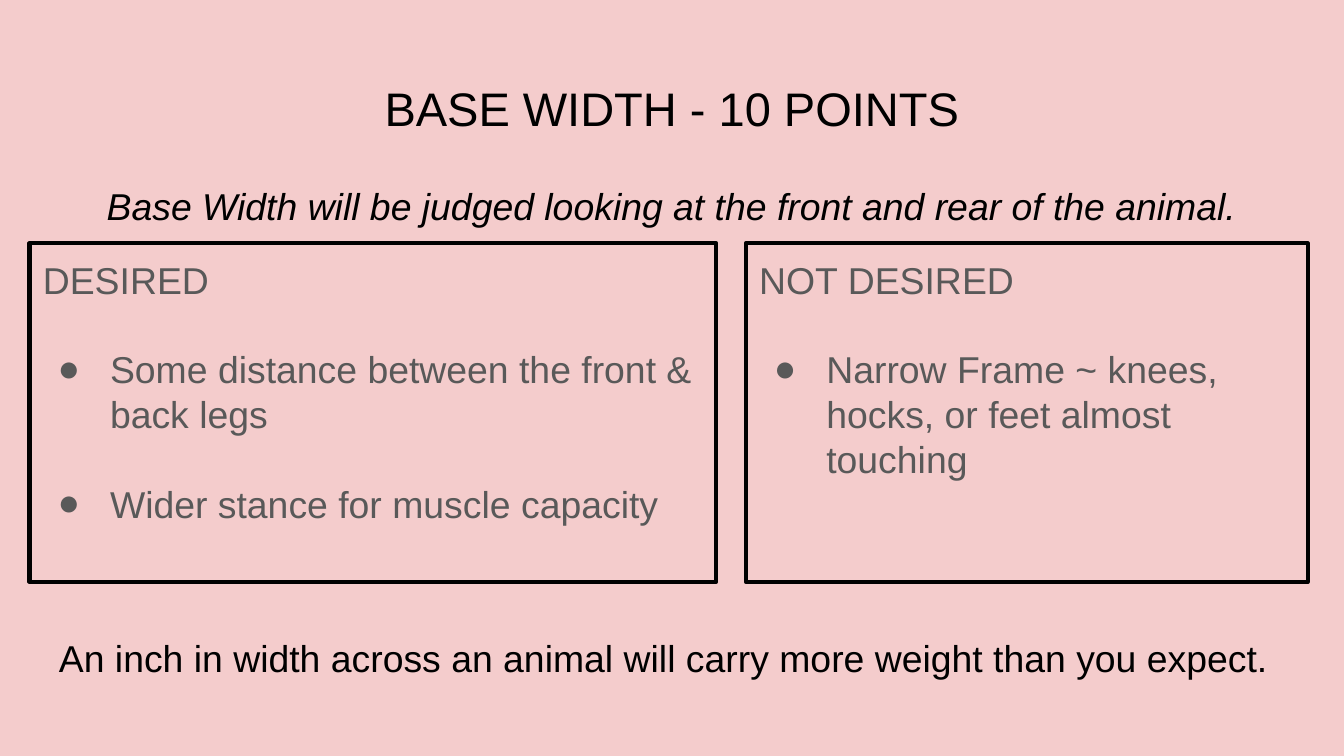
from lxml.etree import SubElement
from pptx import Presentation
from pptx.dml.color import RGBColor
from pptx.enum.shapes import MSO_SHAPE
from pptx.enum.text import MSO_ANCHOR as Anchor, PP_ALIGN as Align
from pptx.oxml.ns import qn
from pptx.util import Inches, Pt

PINK = RGBColor(0xF4, 0xCC, 0xCC)
BLACK = RGBColor(0, 0, 0)
GREY = RGBColor(0x59, 0x59, 0x59)
BODY_SIZE = 20
BULLET_GAP = 24


def inches(box):
    """Turn a box of plain numbers into lengths."""
    return [Inches(value) for value in box]


def set_frame(frame):
    """Give a text frame wrapping, even insets and a top anchor."""
    frame.word_wrap = True
    frame.vertical_anchor = Anchor.TOP
    frame.margin_left = frame.margin_right = Inches(0.1)
    frame.margin_top = frame.margin_bottom = Inches(0.1)


def style(paragraph, color, size=BODY_SIZE, align=Align.LEFT, italic=False):
    """Format a paragraph and its runs."""
    paragraph.alignment = align
    for run in paragraph.runs:
        font = run.font
        font.name, font.size, font.italic = "Arial", Pt(size), italic
        font.color.rgb = color


def add_bullet(paragraph):
    """Give a paragraph a hanging round bullet."""
    properties = paragraph._p.get_or_add_pPr()
    properties.set("marL", str(Inches(0.5)))
    properties.set("indent", str(Inches(-0.39)))
    bullet_color = SubElement(properties, qn("a:buClr"))
    SubElement(bullet_color, qn("a:srgbClr"), val=str(GREY))
    SubElement(properties, qn("a:buFont"), typeface="Arial")
    SubElement(properties, qn("a:buChar"), char="●")


def place_title(slide, box, wording):
    """Move and format the title placeholder."""
    title = slide.shapes.title
    title.left, title.top, title.width, title.height = inches(box)
    title.text_frame.text = wording
    set_frame(title.text_frame)
    style(title.text_frame.paragraphs[0], BLACK, 25.2, Align.CENTER)


def add_statement(slide, box, wording, **look):
    """Add a one-line statement."""
    frame = slide.shapes.add_textbox(*inches(box)).text_frame
    frame.text = wording
    set_frame(frame)
    style(frame.paragraphs[0], BLACK, **look)


def add_panel(slide, box, heading, traits):
    """Add an outlined panel with a heading and bulleted traits."""
    panel = slide.shapes.add_shape(MSO_SHAPE.RECTANGLE, *inches(box))
    panel.shadow.inherit = False
    panel.fill.background()
    panel.line.color.rgb = BLACK
    panel.line.width = Pt(2.25)
    frame = panel.text_frame
    set_frame(frame)
    frame.text = "\n".join([heading, *traits])
    for paragraph in frame.paragraphs:
        style(paragraph, GREY)
    for paragraph in frame.paragraphs[1:]:
        paragraph.space_before = Pt(BULLET_GAP)
        add_bullet(paragraph)


def main():
    """Build the base width slide."""
    deck = Presentation()
    deck.slide_width = Inches(10)
    deck.slide_height = deck.slide_width * 9 // 16
    slide = deck.slides.add_slide(deck.slide_layouts[5])
    slide.background.fill.solid()
    slide.background.fill.fore_color.rgb = PINK

    place_title(slide, (0.34, 0.49, 9.32, 0.63), "BASE WIDTH - 10 POINTS")
    add_statement(
        slide, (0.34, 1.26, 9.32, 0.55),
        "Base Width will be judged looking at the front and rear of the animal.",
        align=Align.CENTER, italic=True)
    add_panel(slide, (0.22, 1.81, 5.11, 2.52), "DESIRED", [
        "Some distance between the front & back legs",
        "Wider stance for muscle capacity"])
    add_panel(slide, (5.55, 1.81, 4.18, 2.52), "NOT DESIRED", [
        "Narrow Frame ~ knees, hocks, or feet almost touching"])
    add_statement(
        slide, (0.34, 4.63, 9.26, 0.63),
        "An inch in width across an animal will carry more weight than you expect.")
    deck.save("out.pptx")


if __name__ == "__main__":
    main()
